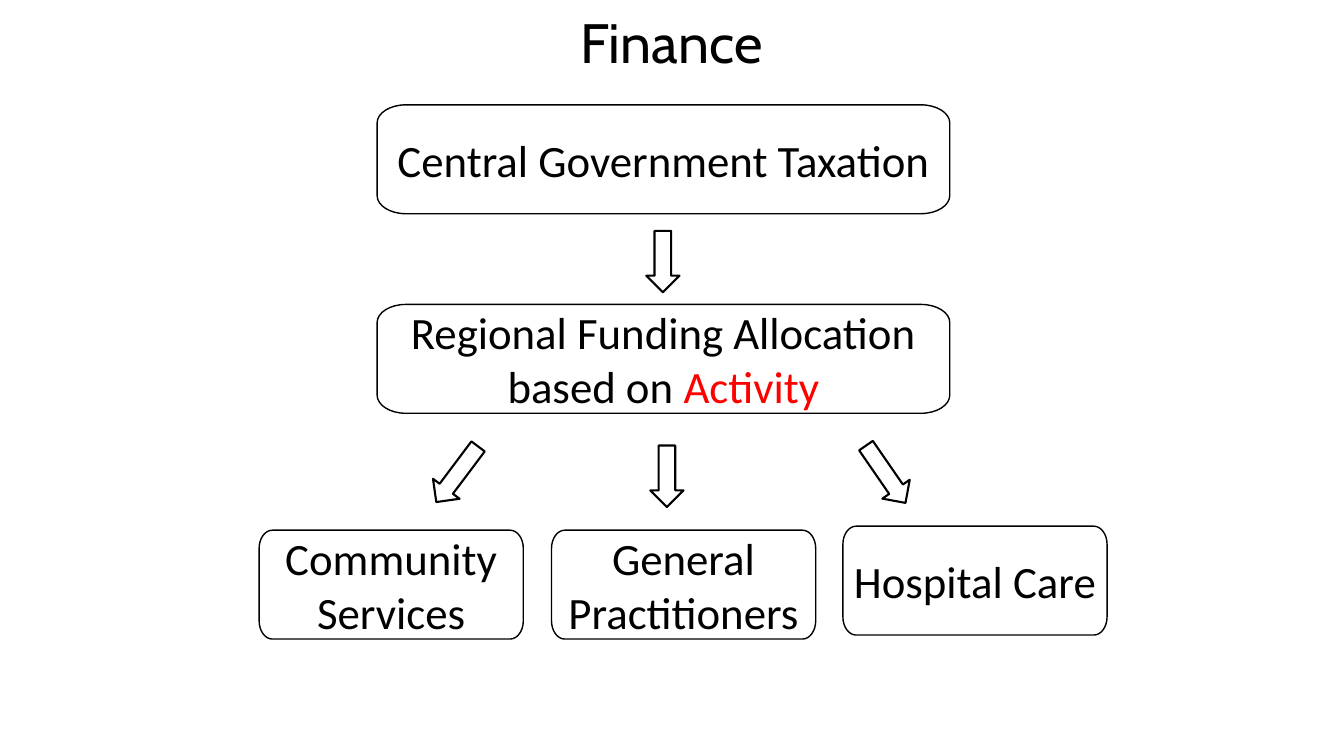
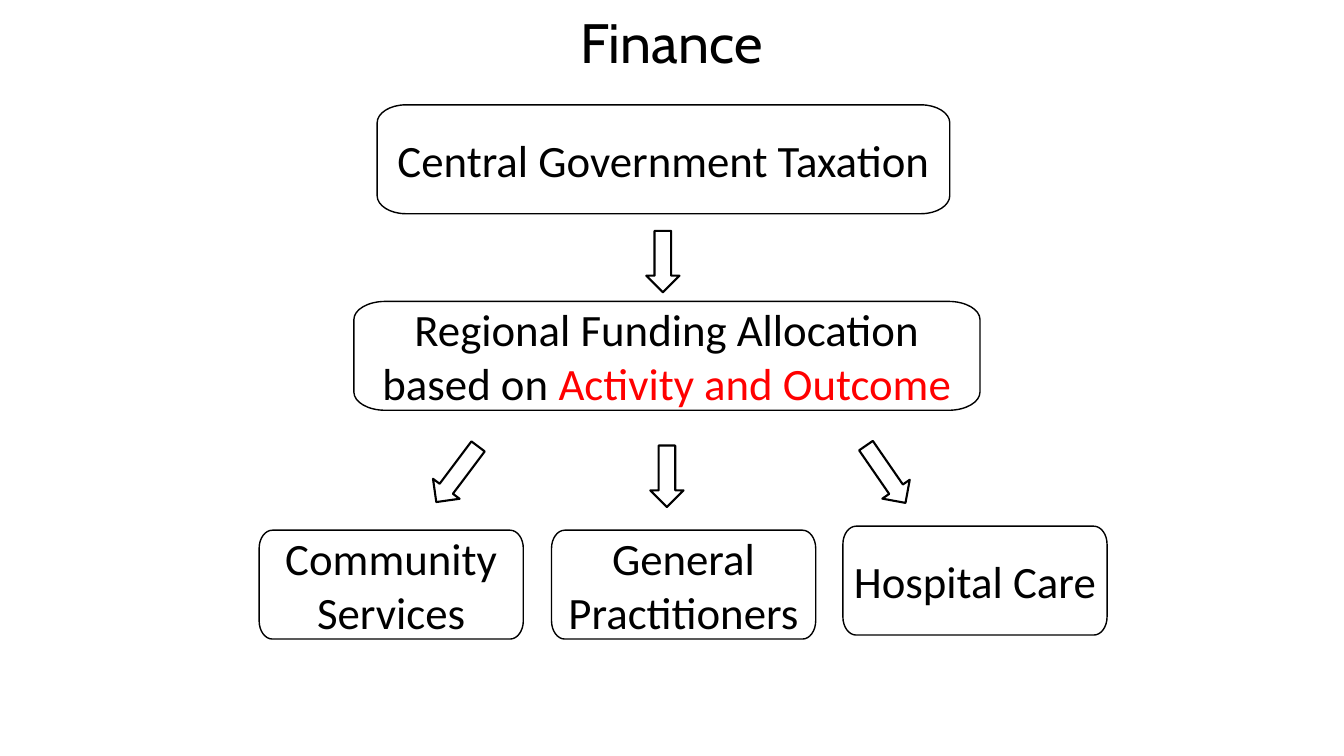
from lxml import etree
from pptx import Presentation
from pptx.dml.color import RGBColor
from pptx.enum.shapes import MSO_SHAPE
from pptx.enum.text import MSO_ANCHOR, PP_ALIGN
from pptx.oxml.ns import qn
from pptx.util import Inches, Pt

DOWN_ARROW = MSO_SHAPE.DOWN_ARROW
MIDDLE = MSO_ANCHOR.MIDDLE
CENTER = PP_ALIGN.CENTER

# Shared look
BLACK, RED = "000000", "FF0000"
TITLE_FORMAT = {"name": "Cabin", "size": Pt(39.6)}
BODY_FORMAT = {"name": "Calibri", "size": Pt(32)}
FRAME_FORMAT = {"word_wrap": True, "vertical_anchor": MIDDLE}

# Corner radii as shares of the box, and the Bezier pull of a quarter ellipse
CORNER_X, CORNER_Y, CURVE_PULL = 0.05, 1 / 6, 0.55
BOX_HEIGHT = 1.08

# Arrows: left, top, height, rotation
ARROW_WIDTH = 0.33
ARROWS = [
    (6.41, 2.29, 0.61, 0),
    (6.45, 4.42, 0.61, 0),
    (4.37, 4.36, 0.69, 36.9),
    (8.62, 4.36, 0.69, 325.4),
]

# Boxes on both slides: left, top, width, text
TAXATION_BOX = (3.74, 1.04, 5.68, "Central Government Taxation")
SERVICE_BOXES = [
    (2.57, 5.26, 2.62, "Community Services"),
    (5.47, 5.26, 2.62, "General Practitioners"),
    (8.36, 5.22, 2.62, "Hospital Care"),
]

# Funding box of each slide: left, top, width, highlighted words
FUNDING_BOXES = [
    (3.74, 3.02, 5.68, "Activity"),
    (3.51, 2.99, 6.21, "Activity and Outcome"),
]


def color(hex_string):
    return RGBColor.from_string(hex_string)


def apply_format(target, values):
    for name, value in values.items():
        setattr(target, name, value)


def write_text(shape, pieces, font_format):
    """Write (text, colour) pieces as one centred paragraph."""
    apply_format(shape.text_frame, FRAME_FORMAT)
    paragraph = shape.text_frame.paragraphs[0]
    paragraph.alignment = CENTER
    for text, hex_string in pieces:
        run = paragraph.add_run()
        run.text = text
        apply_format(run.font, font_format)
        run.font.color.rgb = color(hex_string)
    return paragraph


def outline(shape, width):
    shape.shadow.inherit = False
    shape.fill.background()
    shape.line.color.rgb = color(BLACK)
    shape.line.width = Pt(width)


def add_title(slide, text):
    shape = slide.shapes.add_textbox(
        Inches(2.35), Inches(0.12), Inches(8.62), Inches(0.66))
    paragraph = write_text(shape, [(text, BLACK)], TITLE_FORMAT)
    paragraph.line_spacing = 0.9


def add_arrow(slide, left, top, height, rotation):
    shape = slide.shapes.add_shape(
        DOWN_ARROW, Inches(left), Inches(top), Inches(ARROW_WIDTH), Inches(height))
    shape.rotation = rotation
    outline(shape, 1.5)


def round_corners(shape):
    """Turn every other edge of an eight-point outline into a curve."""
    path = next(shape.element.iter(qn("a:path")))
    points = [(int(point.get("x")), int(point.get("y")))
              for point in path.iter(qn("a:pt"))]
    edges = path.findall(qn("a:lnTo"))
    for index in range(0, len(points), 2):
        start, end = points[index], points[index + 1]
        # Curves leave the horizontal and vertical sides in turn
        corner = (end[0], start[1]) if index % 4 == 0 else (start[0], end[1])
        curve = etree.Element(qn("a:cubicBezTo"))
        controls = [tuple(round(a + CURVE_PULL * (b - a)) for a, b in zip(anchor, corner))
                    for anchor in (start, end)]
        for x, y in (*controls, end):
            etree.SubElement(curve, qn("a:pt"), x=str(x), y=str(y))
        path.replace(edges[index], curve)


def add_box(slide, left, top, width, pieces):
    right, bottom = left + width, top + BOX_HEIGHT
    radius_x, radius_y = width * CORNER_X, BOX_HEIGHT * CORNER_Y
    near_x, far_x = left + radius_x, right - radius_x
    near_y, far_y = top + radius_y, bottom - radius_y
    points = [(Inches(x), Inches(y)) for x, y in (
        (near_x, top), (left, near_y), (left, far_y), (near_x, bottom),
        (far_x, bottom), (right, far_y), (right, near_y), (far_x, top))]
    builder = slide.shapes.build_freeform(*points[0])
    builder.add_line_segments(points[1:], close=True)
    shape = builder.convert_to_shape()
    round_corners(shape)
    outline(shape, 1)
    write_text(shape, pieces, BODY_FORMAT)


def add_finance_slide(presentation, funding_box):
    slide = presentation.slides.add_slide(presentation.slide_layouts[6])
    add_title(slide, "Finance")
    for arrow in ARROWS:
        add_arrow(slide, *arrow)

    # Boxes from the top level down
    *funding_place, highlight = funding_box
    funding_pieces = [("Regional Funding Allocation based on ", BLACK), (highlight, RED)]
    *taxation_place, taxation_text = TAXATION_BOX
    add_box(slide, *taxation_place, [(taxation_text, BLACK)])
    add_box(slide, *funding_place, funding_pieces)
    for *place, text in SERVICE_BOXES:
        add_box(slide, *place, [(text, BLACK)])


def main():
    presentation = Presentation()
    presentation.slide_width = Inches(13.33)
    presentation.slide_height = Inches(7.5)
    for funding_box in FUNDING_BOXES:
        add_finance_slide(presentation, funding_box)
    presentation.save("out.pptx")


if __name__ == "__main__":
    main()
